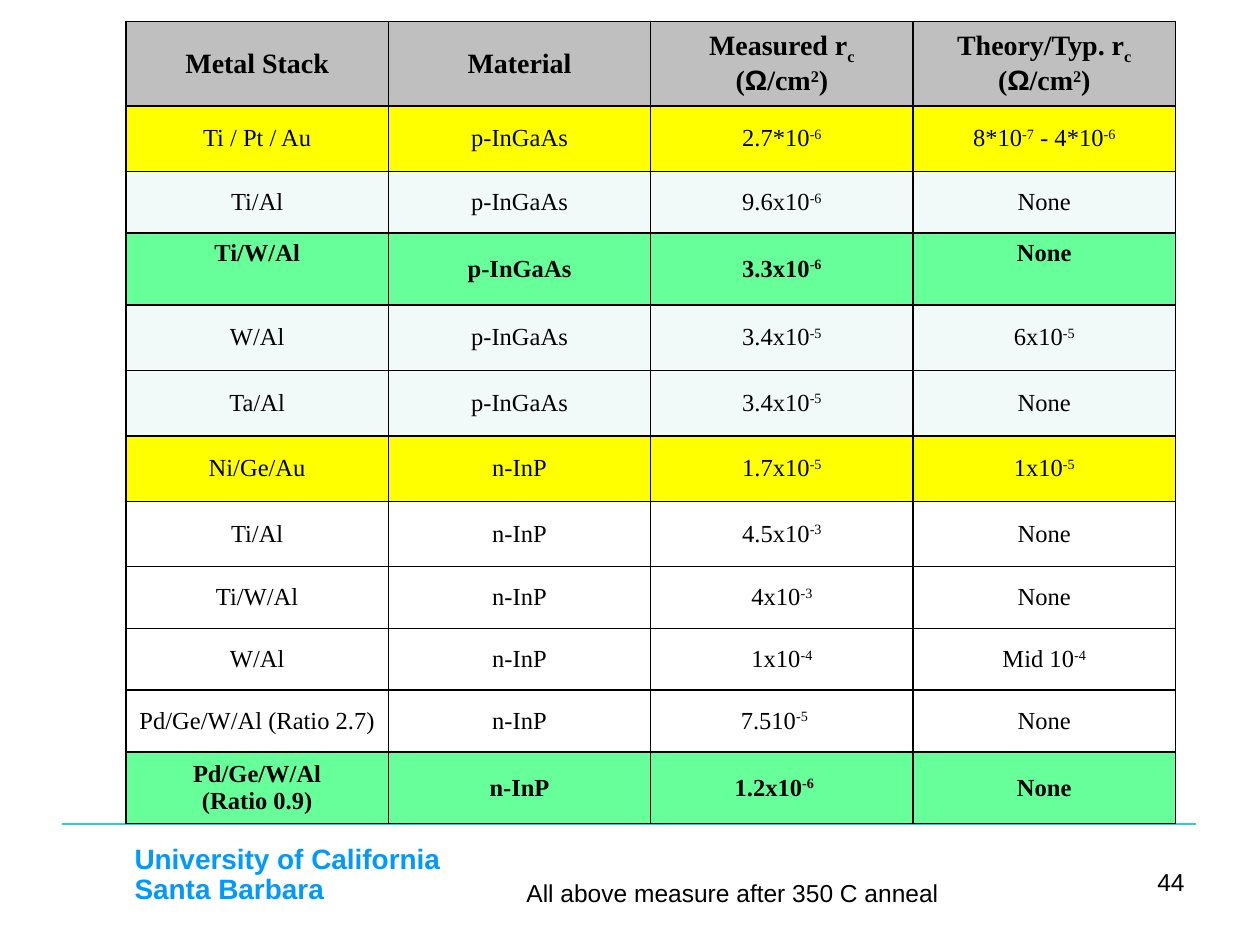
from lxml import etree
from pptx import Presentation
from pptx.dml.color import RGBColor
from pptx.enum import shapes, text
from pptx.oxml import ns, parse_xml
from pptx.util import Inches, Pt

GREY, YELLOW, GREEN = "BFBFBF", "FFFF00", "66FF99"
PALE, WHITE, BLACK = "F1F9F9", "FFFFFF", "000000"
SERIF, SANS = "Times New Roman", "Arial"

# Cell text: pieces between carets are raised, except "c" (lowered) and "Ω" (sans).
# Each row: height, fill, cells.
ROWS = [
    (0.67, GREY, ["Metal Stack", "Material", "Measured r^c^\n(^Ω^/cm^2^)",
                  "Theory/Typ. r^c^\n(^Ω^/cm^2^)"]),
    (0.52, YELLOW, ["Ti / Pt / Au", "p-InGaAs", "2.7*10^-6", "8*10^-7^ - 4*10^-6"]),
    (0.49, PALE, ["Ti/Al", "p-InGaAs", "9.6x10^-6", "None"]),
    (0.57, GREEN, ["Ti/W/Al", "p-InGaAs", "3.3x10^-6", "None"]),
    (0.52, PALE, ["W/Al", "p-InGaAs", "3.4x10^-5", "6x10^-5"]),
    (0.52, PALE, ["Ta/Al", "p-InGaAs", "3.4x10^-5", "None"]),
    (0.52, YELLOW, ["Ni/Ge/Au", "n-InP", "1.7x10^-5", "1x10^-5"]),
    (0.52, WHITE, ["Ti/Al", "n-InP", "4.5x10^-3", "None"]),
    (0.49, WHITE, ["Ti/W/Al", "n-InP", "4x10^-3", "None"]),
    (0.49, WHITE, ["W/Al", "n-InP", "1x10^-4", "Mid 10^-4"]),
    (0.49, WHITE, ["Pd/Ge/W/Al (Ratio 2.7)", "n-InP", "7.510^-5", "None"]),
    (0.57, GREEN, ["Pd/Ge/W/Al\n(Ratio 0.9)", "n-InP", "1.2x10^-6", "None"]),
]
TOP_CELLS = {(3, 0), (3, 3)}
SHIFTED_CELLS = {(10, 2), (11, 2)}


def color(value):
    return RGBColor.from_string(value)


def style(font, size, name, value, bold=False):
    font.size, font.name, font.bold = Pt(size), name, bold
    font.color.rgb = color(value)


def write_line(para, line, size, bold):
    para.alignment = text.PP_ALIGN.CENTER
    for index, piece in enumerate(line.split("^")):
        if not piece:
            continue
        span = para.add_run()
        span.text = piece
        style(span.font, size, SANS if piece == "Ω" else SERIF, BLACK, bold)
        if index % 2 and piece != "Ω":
            span.font._element.set("baseline", "-25000" if piece == "c" else "30000")


def add_borders(cell):
    properties = cell._tc.get_or_add_tcPr()
    for side in ("lnL", "lnR", "lnT", "lnB"):
        properties.append(parse_xml(
            f'<a:{side} {ns.nsdecls("a")} w="{Pt(1)}"><a:solidFill>'
            f'<a:srgbClr val="{BLACK}"/></a:solidFill></a:{side}>'))


def contact_table(page, left, top, width):
    height = sum(row[0] for row in ROWS)
    table = page.shapes.add_table(len(ROWS), 4, Inches(left), Inches(top),
                                  Inches(width), Inches(height)).table
    table.first_row = table.horz_banding = False
    for column in table.columns:
        column.width = Inches(width / 4)
    for r, (row_height, fill, values) in enumerate(ROWS):
        table.rows[r].height = Inches(row_height)
        for c, value in enumerate(values):
            cell = table.cell(r, c)
            add_borders(cell)
            cell.fill.solid()
            cell.fill.fore_color.rgb = color(fill)
            cell.vertical_anchor = (text.MSO_ANCHOR.TOP if (r, c) in TOP_CELLS
                                    else text.MSO_ANCHOR.MIDDLE)
            if (r, c) in SHIFTED_CELLS:
                cell.margin_right = Inches(0.22)
            for n, line in enumerate(value.split("\n")):
                frame = cell.text_frame
                para = frame.add_paragraph() if n else frame.paragraphs[0]
                write_line(para, line, 14 if r else 16, fill in (GREY, GREEN))


def add_label(page, box, words, size, value, bold=False, wrap=True,
              align=text.PP_ALIGN.LEFT, spacing=1.0):
    frame = page.shapes.add_textbox(*map(Inches, box)).text_frame
    frame.word_wrap = wrap
    frame.text = words
    for para in frame.paragraphs:
        para.alignment, para.line_spacing = align, spacing
        for span in para.runs:
            style(span.font, size, SANS, value, bold)


def footer_rule(page, left, top, width):
    rule = page.shapes.add_connector(shapes.MSO_CONNECTOR.STRAIGHT, Inches(left),
                                     Inches(top), Inches(left + width), Inches(top))
    rule.line.color.rgb = color("33CCCC")
    rule.line.width = Pt(1.5)
    etree.SubElement(rule._element.spPr, ns.qn("a:effectLst"))


def main():
    deck = Presentation()
    deck.slide_width, deck.slide_height = Inches(10), Inches(7.5)
    page = deck.slides.add_slide(deck.slide_layouts[6])

    # Footer branding and rule, behind the table
    add_label(page, (0.97, 6.66, 2.64, 0.58), "University of California\nSanta Barbara",
              16, "0099FF", bold=True, wrap=False, spacing=0.9)
    footer_rule(page, 0.49, 6.54, 9)

    # Contact resistance table
    contact_table(page, 1, 0.17, 8.33)

    # Page number and note
    add_label(page, (7.17, 6.83, 2.33, 0.52), "44", 14, BLACK, align=text.PP_ALIGN.RIGHT)
    add_label(page, (4.08, 6.92, 3.67, 0.34), "All above measure after 350 C anneal",
              14, BLACK)
    deck.save("out.pptx")


if __name__ == "__main__":
    main()
